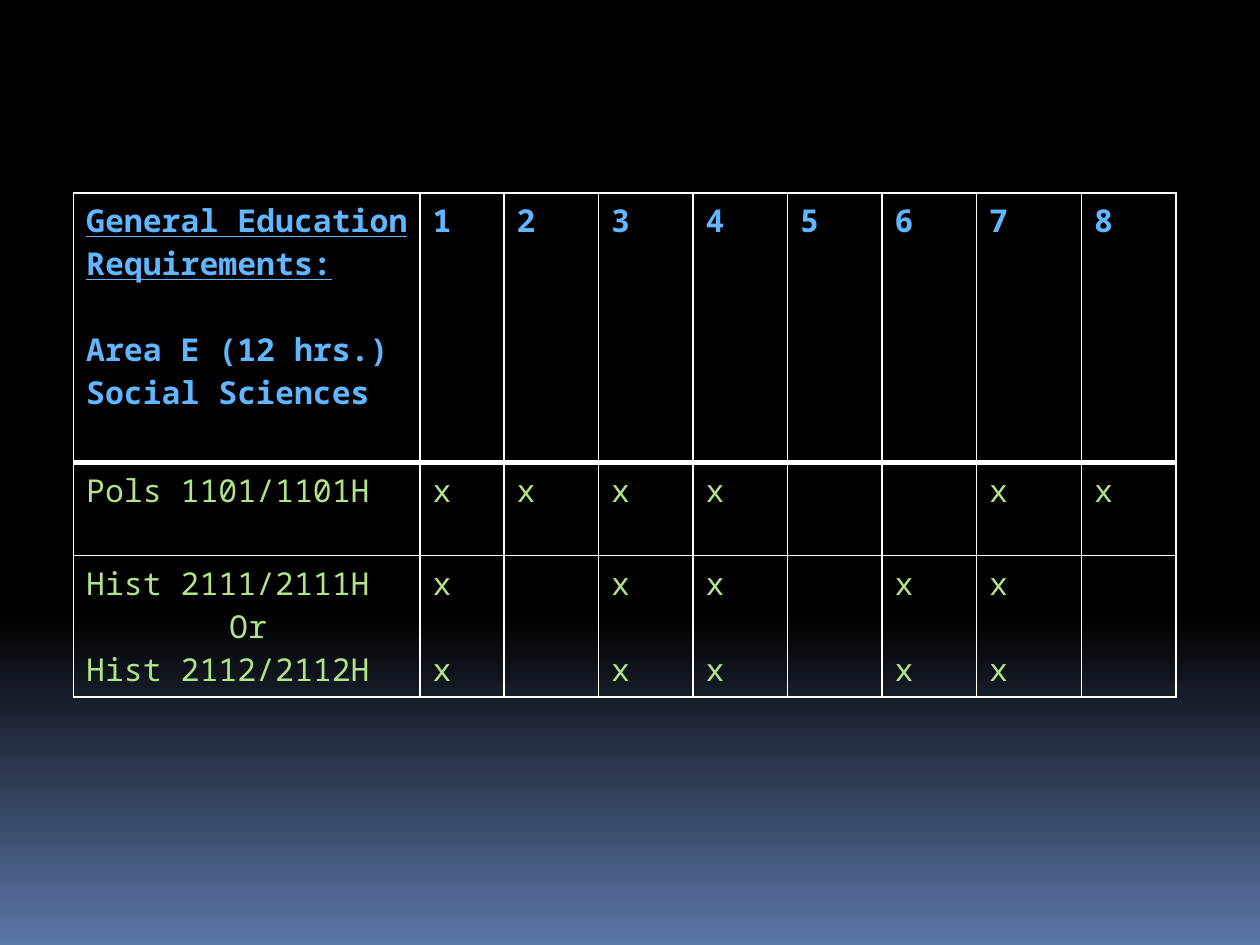
import copy
import dataclasses

import pptx
import pptx.dml.color
import pptx.enum.text
import pptx.oxml
import pptx.oxml.ns
import pptx.util

FONT = "Noto Sans Mono"
BLUE, GREEN, WHITE, BLACK = "61B6FF", "B2E389", "FFFFFF", "000000"
LINE = 24.5  # height of one 18 pt line, in points
UNIT = 1 / 12  # column grid, in inches
COLUMNS = [33, 8, 9, 9, 9, 9, 9, 10, 9]
LEFT, TOP = 7 * UNIT, 1.53


@dataclasses.dataclass
class Para:
    text: str
    underline: bool = False
    centered: bool = False
    skip: int = 0  # lines left free above


@dataclasses.dataclass
class Row:
    height: float
    color: str
    cells: list[list[Para]]
    bold: bool = False
    top: float = 1
    bottom: float = 1


def rgb(value: str) -> pptx.dml.color.RGBColor:
    return pptx.dml.color.RGBColor.from_string(value)


def marks(columns: str, *paras: Para) -> list[list[Para]]:
    """Cells for outcomes 1 to 8, filled only in the named columns."""
    return [list(paras) if str(n) in columns else [] for n in range(1, 9)]


def add_text(p, text: str, *, color: str, bold=False, underline=False,
             centered=False, before=0.0) -> None:
    align = pptx.enum.text.PP_ALIGN
    p.alignment = align.CENTER if centered else align.LEFT
    p.space_before = pptx.util.Pt(before)
    r = p.add_run()
    r.text = text
    r.font.name = FONT
    r.font.size = pptx.util.Pt(18)
    r.font.bold = bold
    r.font.underline = underline
    r.font.color.rgb = rgb(color)


def set_borders(cell, **widths: float) -> None:
    tc_pr = cell._tc.get_or_add_tcPr()
    for side, width in widths.items():
        tc_pr.append(pptx.oxml.parse_xml(
            f'<a:ln{side} {pptx.oxml.ns.nsdecls("a")} w="{pptx.util.Pt(width)}">'
            f'<a:solidFill><a:srgbClr val="{WHITE}"/></a:solidFill></a:ln{side}>'))


def fill_cell(cell, paras: list[Para], row: Row) -> None:
    set_borders(cell, L=1, R=1, T=row.top, B=row.bottom)
    cell.fill.background()
    cell.margin_right = pptx.util.Inches(0.08)
    tf = cell.text_frame
    for i, para in enumerate(paras):
        p = tf.add_paragraph() if i else tf.paragraphs[0]
        add_text(p, para.text, color=row.color, bold=row.bold,
                 underline=para.underline, centered=para.centered,
                 before=para.skip * LINE)


def set_background(s) -> None:
    """Black for the upper 65 %, fading to blue at the bottom."""
    fill = s.background.fill
    fill.gradient()
    fill.gradient_angle = 270
    first = s.element.xpath(".//a:gs")[0]
    first.addnext(copy.deepcopy(first))
    stops = [(0, BLACK), (0.65, BLACK), (1, "5B77A8")]
    for stop, (position, color) in zip(fill.gradient_stops, stops):
        stop.position = position
        stop.color.rgb = rgb(color)


def add_grid(s, rows: list[Row]) -> None:
    inches = pptx.util.Inches
    table = s.shapes.add_table(
        len(rows), len(COLUMNS), inches(LEFT), inches(TOP),
        inches(sum(COLUMNS) * UNIT), inches(sum(r.height for r in rows))).table
    table.first_row = table.horz_banding = False
    for column, units in zip(table.columns, COLUMNS):
        column.width = inches(units * UNIT)
    for i, row in enumerate(rows):
        table.rows[i].height = inches(row.height)
        for j, paras in enumerate(row.cells):
            fill_cell(table.cell(i, j), paras, row)


def main() -> None:
    prs = pptx.Presentation()
    prs.slide_width = pptx.util.Inches(10)
    prs.slide_height = pptx.util.Inches(7.5)
    s = prs.slides.add_slide(prs.slide_layouts[6])
    set_background(s)

    area = [Para("General Education Requirements:", underline=True),
            Para("Area E (12 hrs.)", skip=1),
            Para("Social Sciences")]
    history = [Para("Hist 2111/2111H"), Para("Or", centered=True),
               Para("Hist 2112/2112H")]
    outcomes = [[Para(str(n))] for n in range(1, 9)]
    add_grid(s, [
        Row(2.14, BLUE, [area] + outcomes, bold=True, bottom=3),
        Row(0.74, GREEN, [[Para("Pols 1101/1101H")]]
            + marks("123478", Para("x")), top=3),
        Row(1.12, GREEN, [history]
            + marks("13467", Para("x"), Para("x", skip=1))),
    ])
    prs.save("out.pptx")


if __name__ == "__main__":
    main()
